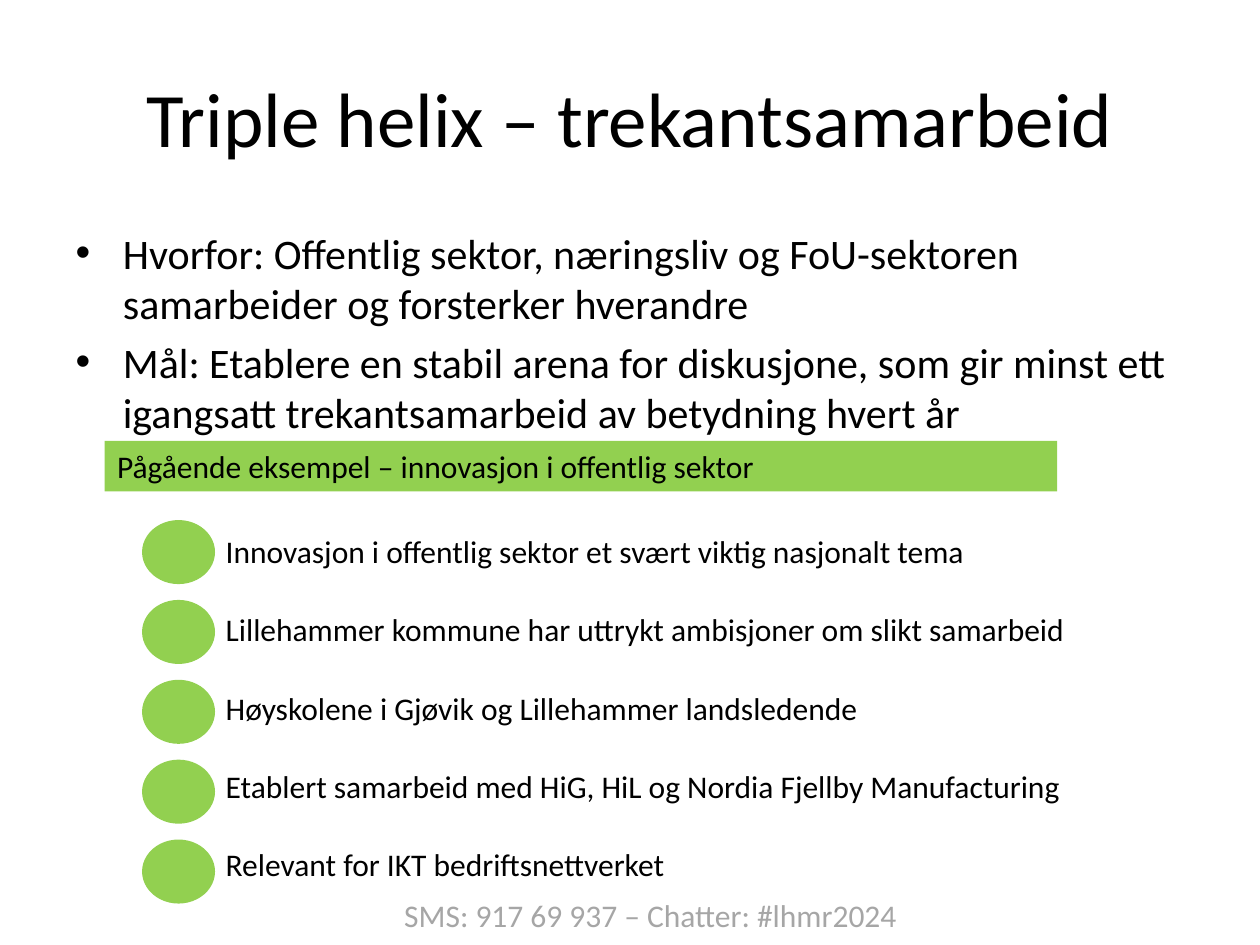
from dataclasses import dataclass
from pptx import Presentation as Deck
from pptx.dml.color import RGBColor as Rgb
from pptx.enum.shapes import MSO_SHAPE as Kind
from pptx.enum.text import MSO_ANCHOR as Anchor, MSO_AUTO_SIZE as Fit, PP_ALIGN as Align
from pptx.util import Cm, Pt


@dataclass(frozen=True)
class Theme:
    """Hold the colours, font and type sizes."""
    face: str = "Calibri"
    ink: Rgb = Rgb(0x00, 0x00, 0x00)
    grey: Rgb = Rgb(0xA6, 0xA6, 0xA6)
    green: Rgb = Rgb(0x92, 0xD0, 0x50)
    head: int = 44
    body: int = 24
    note: int = 18
    line: int = 2


class Page:
    """Draw styled elements on one slide."""

    def __init__(self, slide, theme):
        """Keep the slide and its theme."""
        self.slide = slide
        self.theme = theme

    def apply(self, item, form):
        """Set each value of a format dict on an item."""
        for name, value in form.items():
            setattr(item, name, value)

    def letter(self, shape, lines, size, tone=None, side=Align.LEFT, **form):
        """Fill a shape with styled paragraphs."""
        frame = shape.text_frame
        frame.text = "\n".join(lines)
        self.apply(frame, {"word_wrap": True, "auto_size": Fit.NONE, **form})
        font = {"name": self.theme.face, "size": Pt(size)}
        for para in frame.paragraphs:
            para.alignment = side
            for run in para.runs:
                self.apply(run.font, font)
                run.font.color.rgb = tone or self.theme.ink

    def holder(self, index, box, lines, size, **form):
        """Place and fill a template placeholder."""
        shape = self.slide.placeholders[index]
        names = ("left", "top", "width", "height")
        self.apply(shape, dict(zip(names, map(Cm, box))))
        self.letter(shape, lines, size, **form)

    def label(self, box, text, tone=None):
        """Add a line of plain text."""
        shape = self.slide.shapes.add_textbox(*map(Cm, box))
        self.letter(shape, [text], self.theme.note, tone)

    def block(self, kind, box):
        """Add a green shape."""
        shape = self.slide.shapes.add_shape(kind, *map(Cm, box))
        shape.shadow.inherit = False
        shape.fill.solid()
        shape.fill.fore_color.rgb = self.theme.green
        return shape

    def dot(self, box):
        """Add an outlined green marker."""
        line = self.block(Kind.OVAL, box).line
        line.color.rgb = self.theme.green
        line.width = Pt(self.theme.line)

    def banner(self, box, text):
        """Add a green bar with text."""
        shape = self.block(Kind.RECTANGLE, box)
        shape.line.fill.background()
        self.letter(shape, [text], self.theme.note, vertical_anchor=Anchor.TOP)


POINTS = [
    "Innovasjon i offentlig sektor et svært viktig nasjonalt tema",
    "Lillehammer kommune har uttrykt ambisjoner om slikt samarbeid",
    "Høyskolene i Gjøvik og Lillehammer landsledende",
    "Etablert samarbeid med HiG, HiL og Nordia Fjellby Manufacturing",
    "Relevant for IKT bedriftsnettverket",
]
GOALS = [
    "Hvorfor: Offentlig sektor, næringsliv og FoU-sektoren samarbeider og forsterker hverandre",
    "Mål: Etablere en stabil arena for diskusjone, som gir minst ett "
    "igangsatt trekantsamarbeid av betydning hvert år",
]


def main():
    """Build and save the slide."""
    deck = Deck()
    deck.slide_width, deck.slide_height = Cm(25.4), Cm(19.05)
    theme = Theme()
    page = Page(deck.slides.add_slide(deck.slide_layouts[1]), theme)
    page.holder(0, (1.27, 0.76, 22.86, 3.18), ["Triple helix – trekantsamarbeid"],
                theme.head, side=Align.CENTER, vertical_anchor=Anchor.MIDDLE)
    page.holder(1, (1.27, 4.45, 22.86, 4.67), GOALS, theme.body)
    for row, text in enumerate(POINTS):
        page.dot((2.9, 10.52 + 1.61 * row, 1.4, 1.22))
        page.label((4.3, 10.6 + 1.58 * row, 20, 1.02), text)
    page.banner((2.11, 8.89, 19.2, 1.02), "Pågående eksempel – innovasjon i offentlig sektor")
    page.label((7.9, 17.93, 11.2, 1.02), "SMS: 917 69 937 – Chatter: #lhmr2024", theme.grey)
    deck.save("out.pptx")


if __name__ == "__main__":
    main()
